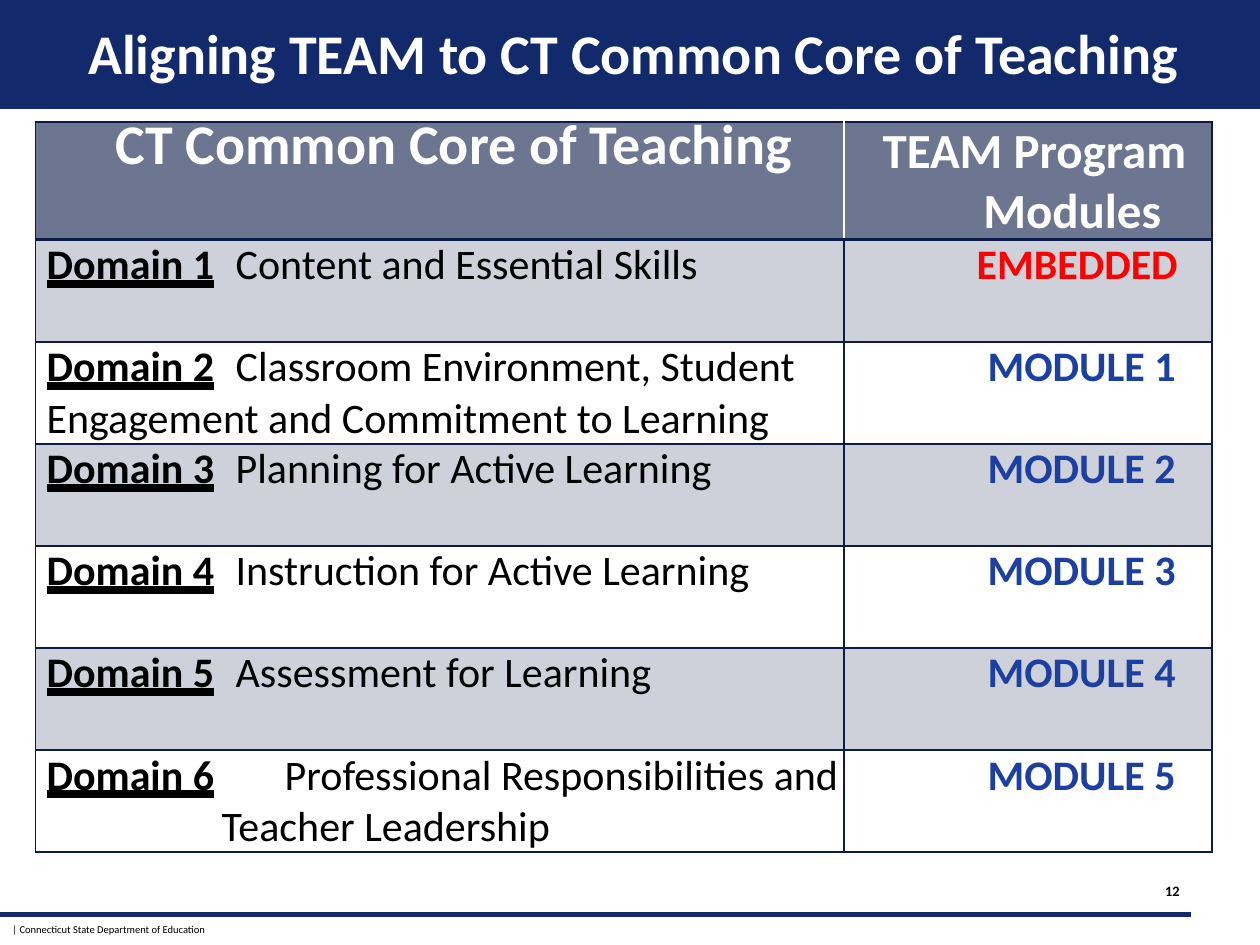
from lxml import etree
from pptx import Presentation
from pptx import util as u
from pptx.dml.color import RGBColor
from pptx.enum import shapes, text
from pptx.oxml import ns

NAVY, DARK, BLUE, RED = "122A6C", "0C1C47", "1B40A2", "FF0000"
WHITE, BLACK = "FFFFFF", "000000"
CENTER = text.PP_ALIGN.CENTER


def color(value):
    return RGBColor.from_string(value)


def add_run(paragraph, words, size, fill, bold=False):
    run = paragraph.add_run()
    run.text = words
    run.font.name = "Calibri"
    run.font.size = u.Pt(size)
    run.font.bold = bold
    run.font.color.rgb = color(fill)
    return run


presentation = Presentation()
presentation.slide_width = u.Inches(10)
presentation.slide_height = u.Inches(7.5)
slide = presentation.slides.add_slide(presentation.slide_layouts[6])

# Title band and footer rule
band = slide.shapes.add_shape(shapes.MSO_SHAPE.RECTANGLE, 0, 0,
                              presentation.slide_width, u.Inches(0.85))
band.shadow.inherit = False
band.fill.solid()
band.fill.fore_color.rgb = color(NAVY)
band.line.color.rgb = color(NAVY)
band.line.width = u.Pt(2)

rule = slide.shapes.add_connector(shapes.MSO_CONNECTOR.STRAIGHT, 0, u.Inches(7.26),
                                  u.Inches(9.45), u.Inches(7.26))
rule.line.color.rgb = color(NAVY)
rule.line.width = u.Pt(3)
etree.SubElement(rule._element.spPr, ns.qn("a:effectLst"))

# Footer, page number and title: box, margins, words, size, colour, bold, alignment
boxes = [
    ((0, 7.28, 5, 0.2), (0.1, 0.05, 0.1, 0.05),
     "| Connecticut State Department of Education", 6, BLACK, False, None),
    ((9.14, 6.95, 0.33, 0.25), (0.04, 0.05, 0.04, 0.05), "12", 8.2, BLACK, True, CENTER),
    ((0, 0.01, 10, 0.67), (0.06, 0.13, 0, 0),
     "Aligning TEAM to CT Common Core of Teaching", 32, WHITE, True, CENTER),
]
for place, margins, words, size, fill, bold, alignment in boxes:
    box = slide.shapes.add_textbox(*[u.Inches(length) for length in place])
    frame = box.text_frame
    frame.word_wrap = True
    (frame.margin_left, frame.margin_top,
     frame.margin_right, frame.margin_bottom) = [u.Inches(length) for length in margins]
    frame.paragraphs[0].alignment = alignment
    add_run(frame.paragraphs[0], words, size, fill, bold)
frame.vertical_anchor = text.MSO_ANCHOR.MIDDLE

# Table content
headers = ["CT Common Core of Teaching", "TEAM Program Modules"]
domains = [
    ("\tContent and Essential Skills", "EMBEDDED"),
    ("\tClassroom Environment, Student Engagement and Commitment to Learning", "MODULE 1"),
    ("\tPlanning for Active Learning", "MODULE 2"),
    ("\tInstruction for Active Learning", "MODULE 3"),
    ("\tAssessment for Learning", "MODULE 4"),
    ("\t\tProfessional Responsibilities and Teacher Leadership", "MODULE 5"),
]
columns, header_height, row_height = (6.42, 2.92), 0.87, 0.81
table = slide.shapes.add_table(
    len(domains) + 1, 2, u.Inches(0.28), u.Inches(0.97), u.Inches(sum(columns)),
    u.Inches(header_height + row_height * len(domains))).table
table.first_row = table.horz_banding = False
for column, width in zip(table.columns, columns):
    column.width = u.Inches(width)
for index, row in enumerate(table.rows):
    row.height = u.Inches(row_height if index else header_height)

# Table text
for cell, words, size, left, hanging in zip(table.rows[0].cells, headers, (32, 28),
                                            (1.67, 0.7), (-1.44, -0.6)):
    paragraph = cell.text_frame.paragraphs[0]
    paragraph.alignment = CENTER
    properties = paragraph._p.get_or_add_pPr()
    properties.set("marL", str(u.Inches(left)))
    properties.set("indent", str(u.Inches(hanging)))
    add_run(paragraph, words, size, WHITE, True)
table.cell(0, 0).text_frame.paragraphs[0].line_spacing = u.Pt(32.8)

for index, (domain, module) in enumerate(domains, 1):
    last = index == len(domains)
    paragraph = table.cell(index, 0).text_frame.paragraphs[0]
    properties = paragraph._p.get_or_add_pPr()
    properties.set("marL", str(u.Inches(1.48 if last else 0.09)))
    properties.set("indent", str(u.Inches(-1.39 if last else 0)))
    tabs = etree.SubElement(properties, ns.qn("a:tabLst"))
    etree.SubElement(tabs, ns.qn("a:tab"), pos=str(u.Inches(1.5)), algn="l")
    label = add_run(paragraph, f"Domain {index}", 24, BLACK, True)
    label.font.underline = text.MSO_UNDERLINE.HEAVY_LINE
    add_run(paragraph, domain, 24, BLACK)

    paragraph = table.cell(index, 1).text_frame.paragraphs[0]
    paragraph.alignment = CENTER
    paragraph._p.get_or_add_pPr().set("marL", str(u.Inches(0.78 if index == 1 else 0.85)))
    add_run(paragraph, module, 24, RED if index == 1 else BLUE, True)

# Cell fills and borders
for index, row in enumerate(table.rows):
    for side, cell in enumerate(row.cells):
        cell.margin_left = cell.margin_right = cell.margin_top = cell.margin_bottom = 0
        if index == 0 or index % 2:
            cell.fill.solid()
            cell.fill.fore_color.rgb = color(DARK)
            tint = cell._tc.tcPr.find(".//" + ns.qn("a:srgbClr"))
            etree.SubElement(tint, ns.qn("a:alpha"), val="20000" if index else "60000")
        else:
            cell.fill.background()
        inner = "lnL" if side else "lnR"
        for order, edge in enumerate(("lnL", "lnR", "lnT", "lnB")):
            thick = (index, edge) in ((0, "lnB"), (1, "lnT"))
            border = etree.Element(ns.qn("a:" + edge), w=str(u.Pt(2 if thick else 1)))
            solid = etree.SubElement(border, ns.qn("a:solidFill"))
            etree.SubElement(solid, ns.qn("a:srgbClr"),
                             val=WHITE if index == 0 and edge == inner else DARK)
            cell._tc.tcPr.insert(order, border)

presentation.save("out.pptx")
